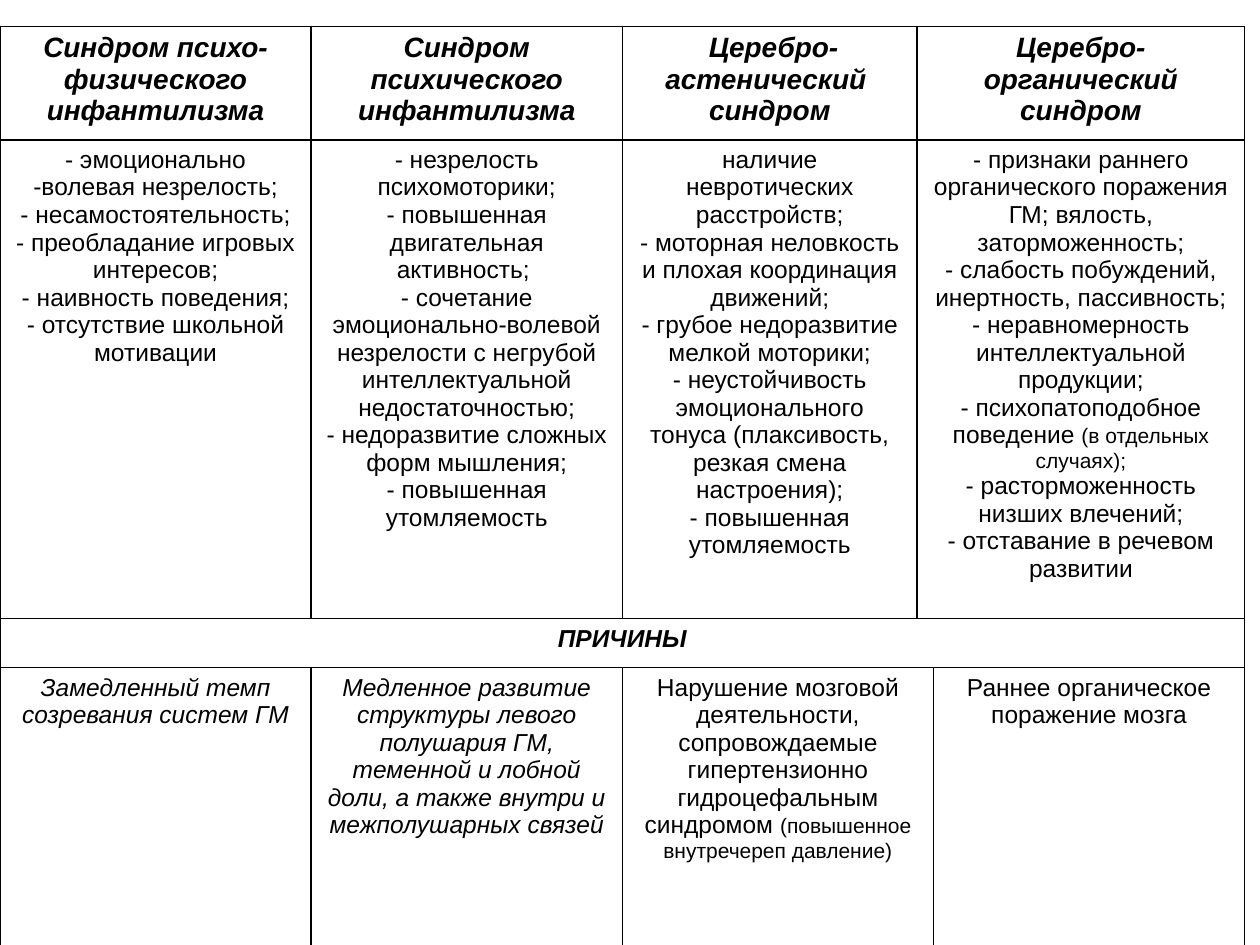
from dataclasses import dataclass

from lxml import etree
from pptx import Presentation
from pptx import util as u
from pptx.dml.color import RGBColor
from pptx.enum import text
from pptx.oxml.ns import qn

BLACK = RGBColor(0x00, 0x00, 0x00)
FONT = "Arial"
SMALL_SIZE = 12
SLIDE_WIDTH, SLIDE_HEIGHT = u.Inches(10), u.Inches(7.5)

# Grid of the table, in inches; the narrow column offsets the last divider
COLUMNS = (2.47, 2.47, 2.34, 0.13, 2.47)
ROWS = (0.9, 3.8, 0.39, 3.73)
TABLE_TOP = 0.21


@dataclass(frozen=True)
class Style:
    size: int = 14
    bold: bool = False
    italic: bool = False


@dataclass(frozen=True)
class Entry:
    """A cell's text: one line per paragraph, '|' starts a smaller run."""
    row: int
    column: int
    lines: tuple[str, ...]
    style: Style
    span: int = 1


HEADING = Style(size=16, bold=True, italic=True)
SECTION = Style(bold=True, italic=True)
CAUSE = Style(italic=True)
BODY = Style()

ENTRIES = (
    # Syndromes
    Entry(0, 0, ("Синдром психо-физического инфантилизма",), HEADING),
    Entry(0, 1, ("Синдром психического инфантилизма",), HEADING),
    Entry(0, 2, (" Церебро-астенический ", "синдром"), HEADING),
    Entry(0, 3, ("Церебро-органический синдром",), HEADING, span=2),
    # Signs
    Entry(1, 0, (
        "- эмоционально -волевая незрелость;",
        "- несамостоятельность;",
        "- преобладание игровых интересов;",
        "- наивность поведения;",
        "- отсутствие школьной мотивации",
    ), BODY),
    Entry(1, 1, (
        "- незрелость психомоторики;",
        "- повышенная двигательная активность; ",
        "- сочетание эмоционально-волевой незрелости с негрубой "
        "интеллектуальной недостаточностью;",
        "- недоразвитие сложных форм мышления;",
        "- повышенная утомляемость",
    ), BODY),
    Entry(1, 2, (
        "наличие невротических расстройств;",
        "- моторная неловкость и плохая координация движений;",
        "- грубое недоразвитие мелкой моторики;",
        "- неустойчивость эмоционального тонуса (плаксивость, "
        "резкая смена настроения);",
        "- повышенная утомляемость",
    ), BODY),
    Entry(1, 3, (
        "- признаки раннего органического поражения ГМ; вялость, "
        "заторможенность;",
        "- слабость побуждений, инертность, пассивность;",
        "- неравномерность интеллектуальной продукции;",
        "- психопатоподобное поведение |(в отдельных случаях);",
        "- расторможенность низших влечений;",
        "- отставание в речевом развитии",
    ), BODY, span=2),
    # Causes
    Entry(2, 0, ("ПРИЧИНЫ",), SECTION, span=5),
    Entry(3, 0, ("Замедленный темп созревания систем ГМ",), CAUSE),
    Entry(3, 1, (
        "Медленное развитие структуры левого полушария ГМ, теменной и "
        "лобной доли, а также внутри и межполушарных связей",
    ), CAUSE),
    Entry(3, 2, (
        "Нарушение мозговой деятельности, сопровождаемые гипертензионно "
        "гидроцефальным синдромом |(повышенное внутречереп давление)",
    ), BODY, span=2),
    Entry(3, 4, ("Раннее органическое поражение мозга",), BODY),
)


def add_grid(slide):
    """Add the empty table with plain cells and black borders."""
    frame = slide.shapes.add_table(
        len(ROWS), len(COLUMNS), 0, u.Inches(TABLE_TOP),
        u.Inches(sum(COLUMNS)), u.Inches(sum(ROWS)))
    table = frame.table
    table.first_row = table.horz_banding = False
    for column, width in zip(table.columns, COLUMNS):
        column.width = u.Inches(width)
    for row, height in zip(table.rows, ROWS):
        row.height = u.Inches(height)
    for cell in table.iter_cells():
        cell.fill.background()
        draw_borders(cell)
    return table


def draw_borders(cell) -> None:
    properties = cell._tc.get_or_add_tcPr()
    for index, side in enumerate(("lnL", "lnR", "lnT", "lnB")):
        line = etree.Element(qn(f"a:{side}"), w=str(u.Pt(1)))
        fill = etree.SubElement(line, qn("a:solidFill"))
        etree.SubElement(fill, qn("a:srgbClr"), val=str(BLACK))
        properties.insert(index, line)


def write_entry(table, entry: Entry) -> None:
    cell = table.cell(entry.row, entry.column)
    if entry.span > 1:
        cell.merge(table.cell(entry.row, entry.column + entry.span - 1))
    frame = cell.text_frame
    for index, line in enumerate(entry.lines):
        paragraph = frame.add_paragraph() if index else frame.paragraphs[0]
        paragraph.alignment = text.PP_ALIGN.CENTER
        font = paragraph.font
        font.name, font.size = FONT, u.Pt(entry.style.size)
        font.bold, font.italic = entry.style.bold, entry.style.italic
        font.color.rgb = BLACK
        for position, part in enumerate(line.split("|")):
            run = paragraph.add_run()
            run.text = part
            if position:
                run.font.size = u.Pt(SMALL_SIZE)


def main() -> None:
    presentation = Presentation()
    presentation.slide_width = SLIDE_WIDTH
    presentation.slide_height = SLIDE_HEIGHT
    slide = presentation.slides.add_slide(presentation.slide_layouts[6])
    table = add_grid(slide)
    for entry in ENTRIES:
        write_entry(table, entry)
    presentation.save("out.pptx")


if __name__ == "__main__":
    main()
